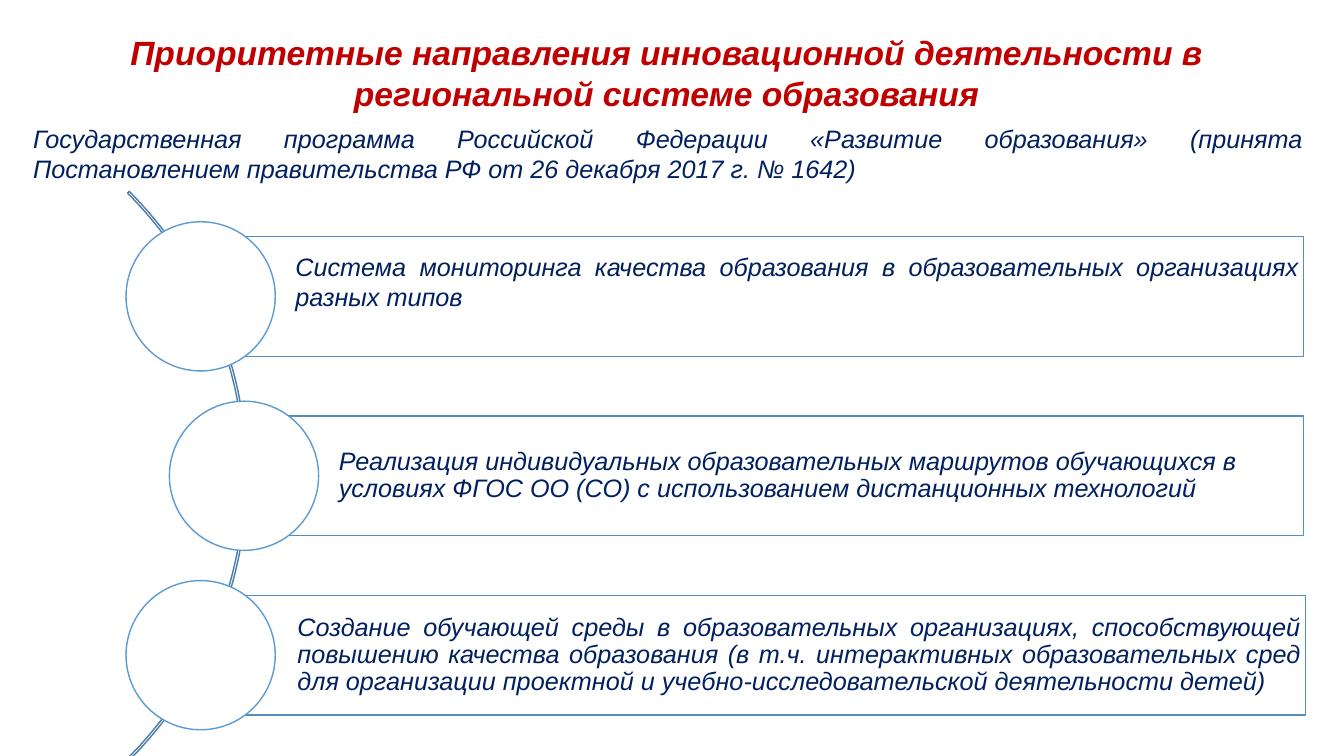
from pptx import Presentation
from pptx.dml.color import RGBColor
from pptx.enum import shapes, text
from pptx.util import Inches, Pt

RED = RGBColor(0xC0, 0x00, 0x00)
NAVY = RGBColor(0x00, 0x20, 0x60)
WHITE = RGBColor(0xFF, 0xFF, 0xFF)
ARC_BLUE = RGBColor(0x49, 0x7C, 0xAB)
BAR_BLUE = RGBColor(0x53, 0x8D, 0xC1)
CIRCLE_BLUE = RGBColor(0x5B, 0x9B, 0xD5)
JUSTIFY = text.PP_ALIGN.JUSTIFY
LEFT = text.PP_ALIGN.LEFT

HEADING = ("Приоритетные направления инновационной деятельности в "
           "региональной системе образования")
PROGRAMME = ("Государственная программа Российской Федерации «Развитие образования» "
             "(принята Постановлением правительства РФ от 26 декабря 2017 г. № 1642)")
DIRECTIONS = [
    dict(wording="Система мониторинга качества образования в образовательных "
                 "организациях разных типов",
         indent=0, nudge=0, align=JUSTIFY, spacing=1.0, bottom=0.34),
    dict(wording="Реализация индивидуальных образовательных маршрутов обучающихся в "
                 "условиях ФГОС ОО (СО) с использованием дистанционных технологий",
         indent=0.43, nudge=0, align=LEFT, spacing=0.9, bottom=0.05),
    dict(wording="Создание обучающей среды в образовательных организациях, "
                 "способствующей повышению качества образования (в т.ч. интерактивных "
                 "образовательных сред для организации проектной и "
                 "учебно-исследовательской деятельности детей)",
         indent=0, nudge=0.02, align=JUSTIFY, spacing=0.9, bottom=0.05),
]


def write(frame, wording, size=18, color=NAVY, bold=False, align=JUSTIFY, spacing=1.0,
          anchor=text.MSO_ANCHOR.TOP, insets=(0.1, 0.05, 0.1, 0.05)):
    frame.word_wrap = True
    frame.auto_size = text.MSO_AUTO_SIZE.NONE
    frame.vertical_anchor = anchor
    (frame.margin_left, frame.margin_top,
     frame.margin_right, frame.margin_bottom) = map(Inches, insets)
    paragraph = frame.paragraphs[0]
    paragraph.alignment = align
    paragraph.line_spacing = spacing
    paragraph.space_before = Pt(0)
    run = paragraph.add_run()
    run.text = wording
    font = run.font
    font.name, font.size, font.bold, font.italic = "Arial", Pt(size), bold, True
    font.color.rgb = color


def add_outline(slide, preset, box, line, fill=None):
    outline = slide.shapes.add_shape(preset, *map(Inches, box))
    outline.shadow.inherit = False
    if fill is None:
        outline.fill.background()
    else:
        outline.fill.solid()
        outline.fill.fore_color.rgb = fill
    outline.line.color.rgb = line
    outline.line.width = Pt(1)
    return outline


def add_header(slide, left, top, width, height):
    heading = slide.shapes.title
    heading.left, heading.top = Inches(left), Inches(top)
    heading.width, heading.height = Inches(width), Inches(height)
    write(heading.text_frame, HEADING, size=24, color=RED, bold=True,
          align=text.PP_ALIGN.CENTER)
    programme = slide.shapes.add_textbox(
        Inches(left + 0.03), Inches(top + 0.9), Inches(width - 0.03), Inches(0.71))
    write(programme.text_frame, PROGRAMME)


def add_direction(slide, left, top, right, direction, diameter=1.48, bar_height=1.19):
    bar_left = left + diameter / 2 + direction["nudge"]
    bar_top = top + (diameter - bar_height) / 2
    bar = add_outline(slide, shapes.MSO_SHAPE.RECTANGLE,
                      (bar_left, bar_top, right + direction["nudge"] - bar_left, bar_height),
                      BAR_BLUE, WHITE)
    write(bar.text_frame, direction["wording"], align=direction["align"],
          spacing=direction["spacing"], anchor=text.MSO_ANCHOR.MIDDLE,
          insets=(0.94, 0.05, 0.05, direction["bottom"]))
    add_outline(slide, shapes.MSO_SHAPE.OVAL, (left, top, diameter, diameter),
                CIRCLE_BLUE, WHITE)


def add_directions(slide, left, top, right, step):
    arc = add_outline(slide, shapes.MSO_SHAPE.BLOCK_ARC,
                      (left - 6.78, top - 1.47, 7.98, 7.98), ARC_BLUE)
    for index, angle in enumerate((189, 27, 0.003)):
        arc.adjustments[index] = angle
    for row, direction in enumerate(DIRECTIONS):
        add_direction(slide, left + direction["indent"], top + row * step, right, direction)


def main():
    deck = Presentation()
    deck.slide_width, deck.slide_height = Inches(13.33), Inches(7.5)
    slide = deck.slides.add_slide(deck.slide_layouts[5])
    add_header(slide, 0.2, 0.27, 12.82, 0.91)
    add_directions(slide, 1.25, 2.2, 12.93, 1.78)
    deck.save("out.pptx")


if __name__ == "__main__":
    main()
